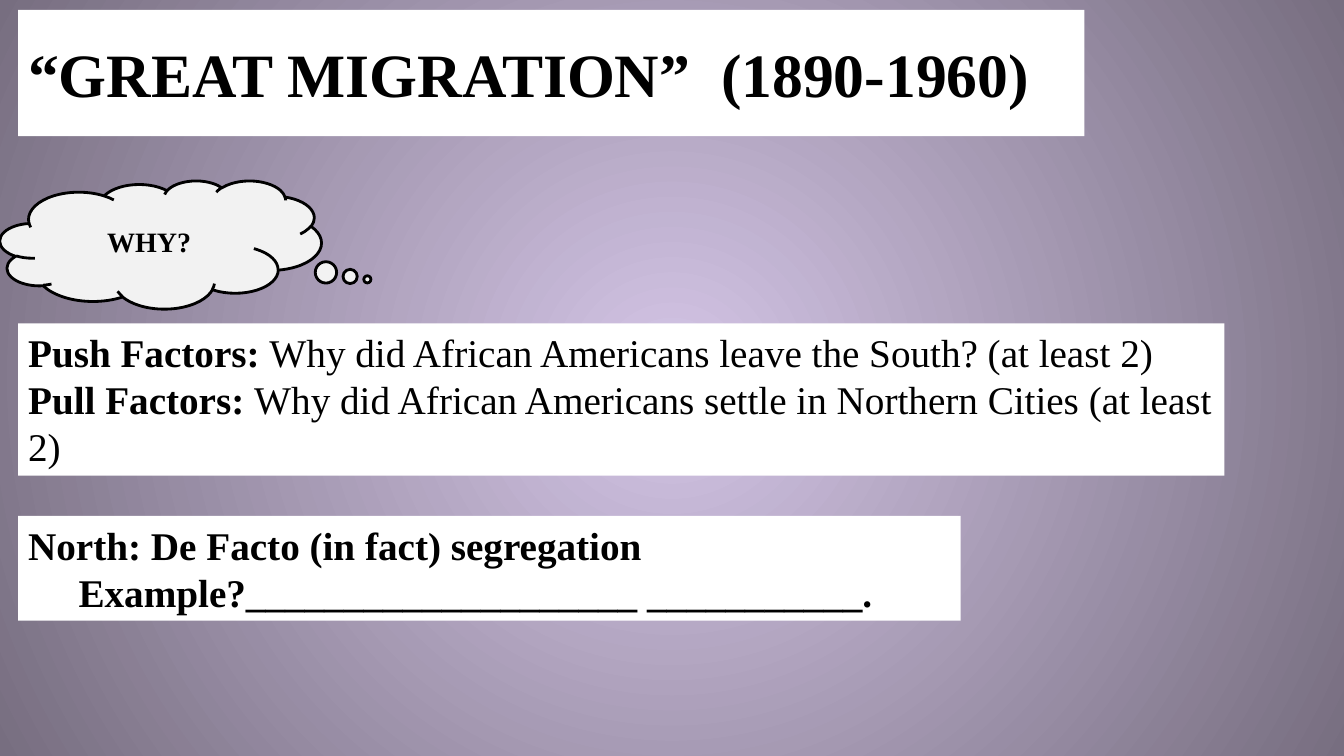
from lxml import etree
from pptx import Presentation
from pptx import util as u
from pptx.dml.color import RGBColor
from pptx.enum import shapes, text
from pptx.oxml.ns import qn

FONT = "Times New Roman"
LEFT = 0.46


def set_solid(fill, color):
    fill.solid()
    fill.fore_color.rgb = RGBColor.from_string(color)


def set_radial_background(slide, center, edge):
    fill = slide.background.fill
    fill.gradient()
    for stop, color, position in zip(fill.gradient_stops, (center, edge), (0, 1)):
        stop.color.rgb = RGBColor.from_string(color)
        stop.position = position
    gradient = slide.element.find(".//" + qn("a:gradFill"))
    gradient.remove(gradient.find(qn("a:lin")))
    circle = etree.SubElement(gradient, qn("a:path"), path="circle")
    etree.SubElement(circle, qn("a:fillToRect"), l="50000", t="50000", r="50000", b="50000")


def write_lines(frame, lines, size, align=text.PP_ALIGN.LEFT):
    """Write one paragraph per line; a line is a list of (words, bold) pairs."""
    frame.word_wrap = True
    for number, line in enumerate(lines):
        paragraph = frame.paragraphs[0] if number == 0 else frame.add_paragraph()
        paragraph.alignment = align
        paragraph.font.name = FONT
        paragraph.font.size = u.Pt(size)
        paragraph.font.color.rgb = RGBColor.from_string("000000")
        for words, bold in line:
            run = paragraph.add_run()
            run.text = words
            run.font.bold = bold


def add_panel(slide, top, width, height, lines, size, anchor=text.MSO_ANCHOR.TOP):
    panel = slide.shapes.add_textbox(u.Cm(LEFT), u.Cm(top), u.Cm(width), u.Cm(height))
    set_solid(panel.fill, "FFFFFF")
    panel.text_frame.vertical_anchor = anchor
    write_lines(panel.text_frame, lines, size)


def add_thought_cloud(slide, top, width, height, words):
    cloud = slide.shapes.add_shape(
        shapes.MSO_SHAPE.CLOUD_CALLOUT, u.Cm(0), u.Cm(top), u.Cm(width), u.Cm(height))
    cloud.adjustments[0] = 0.643
    cloud.adjustments[1] = 0.271
    cloud.shadow.inherit = False
    set_solid(cloud.fill, "F2F2F2")
    set_solid(cloud.line.fill, "000000")
    cloud.line.width = u.Pt(2)
    cloud.text_frame.vertical_anchor = text.MSO_ANCHOR.MIDDLE
    write_lines(cloud.text_frame, [[(words, True)]], 20, text.PP_ALIGN.CENTER)


def main():
    deck = Presentation()
    deck.slide_width, deck.slide_height = u.Cm(33.87), u.Cm(19.05)
    slide = deck.slides.add_slide(deck.slide_layouts[6])
    set_radial_background(slide, "D4C5E6", "776E80")

    add_panel(slide, 0.25, 26.87, 3.18, [[("“GREAT MIGRATION”  (1890-1960)", True)]],
              44, text.MSO_ANCHOR.MIDDLE)
    add_thought_cloud(slide, 4.55, 8.1, 3.23, "WHY?")
    add_panel(slide, 8.15, 30.4, 3.84, [
        [("Push Factors: ", True),
         ("Why did African Americans leave the South? (at least 2)", False)],
        [("Pull Factors: ", True),
         ("Why did African Americans settle in Northern Cities (at least 2)", False)],
    ], 28)
    add_panel(slide, 13, 23.75, 2.64, [
        [("North: De Facto (in fact) segregation", True)],
        [("\tExample?____________________ ___________.", True)],
    ], 28)
    deck.save("out.pptx")


if __name__ == "__main__":
    main()
